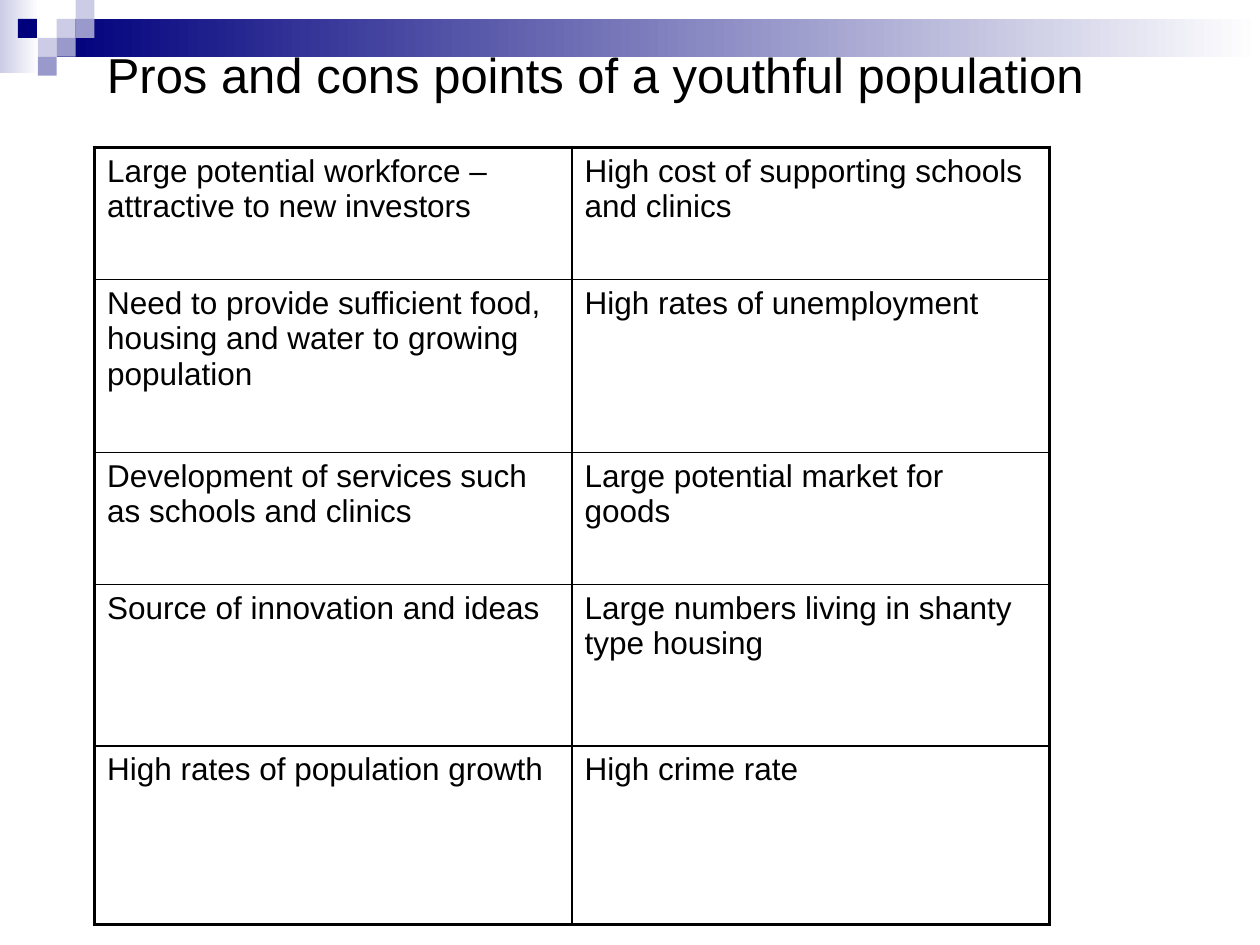
from lxml import etree
from pptx import Presentation
from pptx import util as u
from pptx.dml.color import RGBColor
from pptx.enum import shapes, text
from pptx.oxml import ns

NAVY = RGBColor(0x00, 0x00, 0x7D)
LILAC = RGBColor(0xCC, 0xCC, 0xE6)
VIOLET = RGBColor(0x99, 0x99, 0xCC)
WHITE = RGBColor(0xFF, 0xFF, 0xFF)
BLACK = RGBColor(0x00, 0x00, 0x00)

UNIT = 0.15  # side of one mosaic square, inches
LEFT = 0.75
ROW_HEIGHTS = [1.05, 1.37, 1.05, 1.28, 1.42]
COL_WIDTH = 3.79
POINTS = [
    ("Large potential workforce – attractive to new investors",
     "High cost of supporting schools and clinics"),
    ("Need to provide sufficient food, housing and water to growing population",
     "High rates of unemployment"),
    ("Development of services such as schools and clinics",
     "Large potential market for goods"),
    ("Source of innovation and ideas",
     "Large numbers living in shanty type housing"),
    ("High rates of population growth", "High crime rate"),
]

prs = Presentation()
prs.slide_width, prs.slide_height = u.Inches(10), u.Inches(7.5)
s = prs.slides.add_slide(prs.slide_layouts[6])


def add_block(x, y, w, h, color, fade=False):
    """Add a borderless rectangle, optionally fading to white on the right."""
    sp = s.shapes.add_shape(shapes.MSO_SHAPE.RECTANGLE, *map(u.Inches, (x, y, w, h)))
    sp.shadow.inherit = False
    sp.line.fill.background()
    if fade:
        sp.fill.gradient()
        sp.fill.gradient_angle = 0
        for stop, stop_color in zip(sp.fill.gradient_stops, (color, WHITE)):
            stop.color.rgb = stop_color
    else:
        sp.fill.solid()
        sp.fill.fore_color.rgb = color


def add_border(cell, side, points):
    ln = etree.SubElement(cell._tc.get_or_add_tcPr(), ns.qn(f"a:ln{side}"),
                          w=str(u.Pt(points)))
    fill = etree.SubElement(ln, ns.qn("a:solidFill"))
    etree.SubElement(fill, ns.qn("a:srgbClr"), val=str(BLACK))


# Header band and mosaic
add_block(0, 0, 0.31, 0.58, LILAC, fade=True)
add_block(3 * UNIT, UNIT, 10 - 3 * UNIT, 2 * UNIT, NAVY, fade=True)
for col, row, color in [(3, 1, LILAC), (4, 0, LILAC), (4, 1, VIOLET), (2, 2, LILAC),
                        (0.95, 1, NAVY), (3, 2, VIOLET), (2, 3, VIOLET)]:
    add_block(col * UNIT, row * UNIT, UNIT, UNIT, color)

# Title
tf = s.shapes.add_textbox(*map(u.Inches, (LEFT, 0.17, 9, 0.83))).text_frame
tf.word_wrap = True
tf.vertical_anchor = text.MSO_ANCHOR.MIDDLE
p = tf.paragraphs[0]
p.text = "Pros and cons points of a youthful population"
p.font.name, p.font.size, p.font.color.rgb = "Arial", u.Pt(28), BLACK

# Table of points, with a heavy outer frame
rows, cols = len(POINTS), len(POINTS[0])
table = s.shapes.add_table(rows, cols, *map(u.Inches, (
    LEFT, 1.17, cols * COL_WIDTH, sum(ROW_HEIGHTS)))).table
table.first_row = table.horz_banding = False
for column in table.columns:
    column.width = u.Inches(COL_WIDTH)
for i, (height, row_points) in enumerate(zip(ROW_HEIGHTS, POINTS)):
    table.rows[i].height = u.Inches(height)
    for j, point in enumerate(row_points):
        cell = table.cell(i, j)
        outer = {"L": j == 0, "R": j == cols - 1, "T": i == 0, "B": i == rows - 1}
        for side, is_outer in outer.items():
            add_border(cell, side, 2.25 if is_outer else 1)
        cell.fill.background()
        p = cell.text_frame.paragraphs[0]
        p.text = point
        p.font.name, p.font.size, p.font.color.rgb = "Arial", u.Pt(18), BLACK

prs.save("out.pptx")
